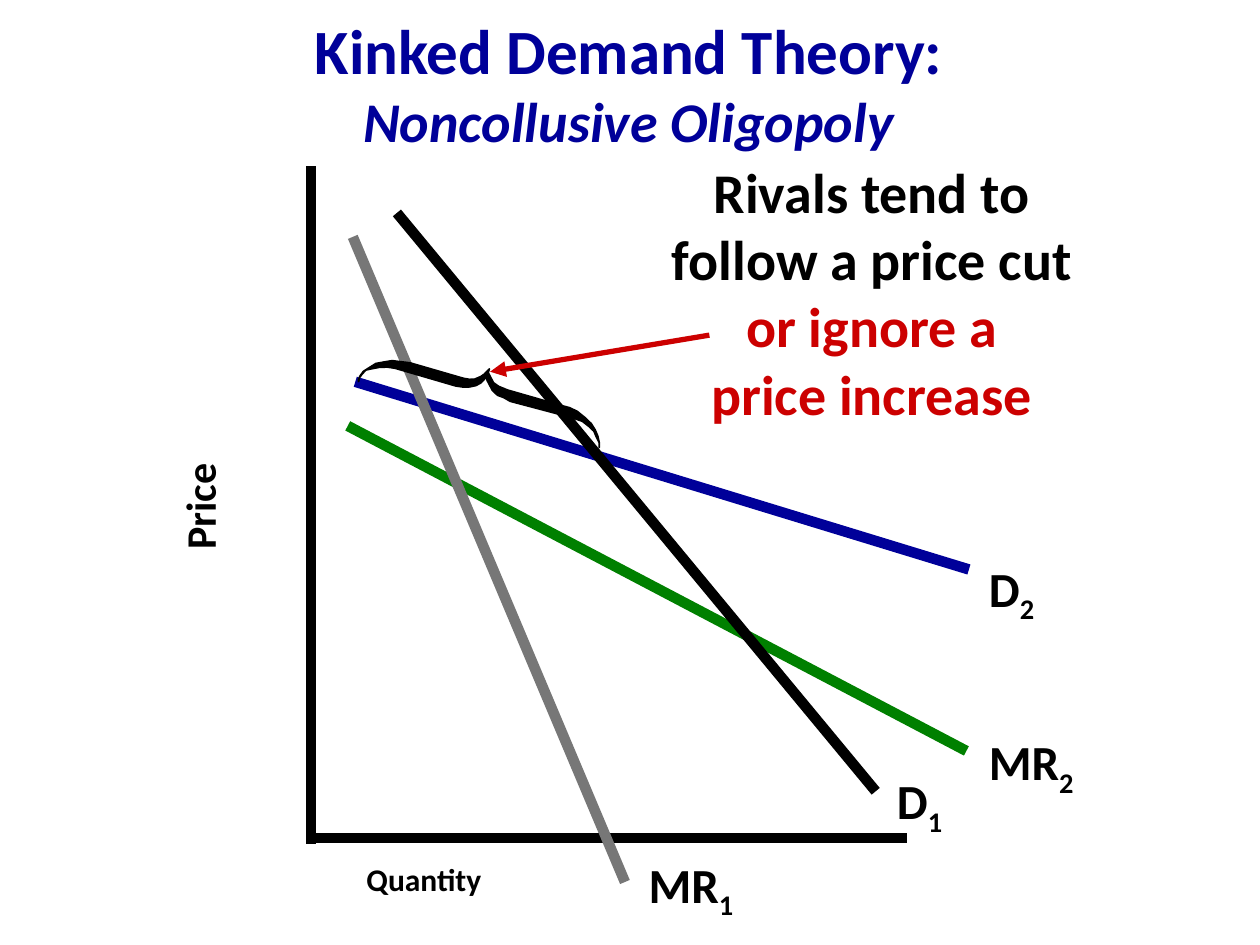
from lxml.etree import SubElement
from pptx import Presentation
from pptx.dml.color import RGBColor
from pptx.enum.shapes import MSO_CONNECTOR as CONNECTOR
from pptx.enum.text import MSO_AUTO_SIZE as AUTO_SIZE, PP_ALIGN as ALIGN
from pptx.oxml.ns import qn
from pptx.util import Inches, Pt

FONT = "Calibri"
BLACK, NAVY, GREEN, GRAY, RED = "000000", "000099", "008000", "777777", "CC0000"

# start, end, colour
CURVES_BEHIND = [
    ((2.76, 3.38), (7.67, 5.96), GREEN),  # MR2
    ((2.82, 3.03), (7.69, 4.52), NAVY),   # D2
    ((2.47, 1.32), (2.47, 6.7), BLACK),   # price axis
    ((2.44, 6.65), (7.2, 6.65), BLACK),   # quantity axis
    ((2.8, 1.88), (4.96, 7), GRAY),       # MR1
    ((3.15, 1.69), (6.95, 6.28), BLACK),  # D1
]
RIVALS_ARROW = ((5.63, 2.66), (3.89, 2.95), RED)

# name, subscript, left, top, width
CURVE_LABELS = [
    ("MR", "2", 7.75, 5.76, 0.97),
    ("D", "1", 7.02, 6.07, 0.88),
    ("D", "2", 7.75, 4.38, 0.88),
    ("MR", "1", 5.05, 6.73, 0.97),
]
LABEL_HEIGHT = 0.56

# box, rotation, alignment, lines of (text, format)
TEXTS = [
    ((2.34, 0.04, 5.3, 1.24), 0, ALIGN.CENTER, [
        ("Kinked Demand Theory:", dict(size=Pt(36), color=NAVY)),
        ("Noncollusive Oligopoly", dict(size=Pt(32), color=NAVY, italic=True))]),
    ((5.01, 1.2, 3.82, 2.23), 0, ALIGN.CENTER, [
        ("Rivals tend to", dict(size=Pt(32), color=BLACK)),
        ("follow a price cut", dict(size=Pt(32), color=BLACK)),
        ("or ignore a", dict(size=Pt(32), color=RED)),
        ("price increase", dict(size=Pt(32), color=RED))]),
    ((2.81, 6.78, 1.55, 0.5), 0, ALIGN.LEFT, [
        ("Quantity", dict(size=Pt(18), color=BLACK))]),
    ((1.07, 3.7, 1.02, 0.5), 270, ALIGN.LEFT, [
        ("Price", dict(size=Pt(24), color=BLACK))]),
]

BRACE_ROTATION = 358.9
BRACE_LOWER_EDGE = [
    (4.75, 3.57), (4.75, 3.53), (4.73, 3.49), (4.71, 3.44), (4.67, 3.4),
    (4.62, 3.36), (4.54, 3.33), (4.05, 3.19), (4, 3.16), (3.95, 3.14),
    (3.91, 3.1), (3.89, 3.06), (3.87, 3.02), (3.87, 2.98), (3.85, 3.01),
    (3.82, 3.04), (3.78, 3.06), (3.73, 3.07), (3.68, 3.07), (3.62, 3.06),
    (3.14, 2.91), (3.08, 2.9), (3.02, 2.9), (2.96, 2.91), (2.91, 2.92),
    (2.88, 2.95), (2.85, 2.99), (2.85, 3.01),
]
BRACE_UPPER_EDGE = [
    (2.86, 2.97), (2.89, 2.93), (2.94, 2.9), (2.99, 2.87), (3.05, 2.86),
    (3.12, 2.85), (3.19, 2.86), (3.26, 2.87), (3.68, 3), (3.73, 3.01),
    (3.77, 3.01), (3.82, 2.99), (3.85, 2.97), (3.88, 2.94), (3.89, 2.93),
    (3.88, 2.96), (3.9, 3), (3.92, 3.04), (3.96, 3.07), (4.03, 3.1),
    (4.45, 3.23), (4.52, 3.25), (4.58, 3.28), (4.64, 3.33), (4.69, 3.38),
    (4.72, 3.43), (4.74, 3.48), (4.75, 3.53),
]


def rgb(color):
    return RGBColor.from_string(color)


def add_line(slide, start, end, color, width=6, arrow=False):
    line = slide.shapes.add_connector(
        CONNECTOR.STRAIGHT, *map(Inches, start + end))
    line.line.color.rgb = rgb(color)
    line.line.width = Pt(width)
    if arrow:
        SubElement(line.line._get_or_add_ln(), qn("a:tailEnd"), type="triangle")
    SubElement(line._element.spPr, qn("a:effectLst"))


def add_text_frame(slide, box, rotation=0):
    text_box = slide.shapes.add_textbox(*map(Inches, box))
    text_box.rotation = rotation
    frame = text_box.text_frame
    frame.word_wrap = True
    frame.auto_size = AUTO_SIZE.NONE
    return frame


def add_run(paragraph, text, color, **formats):
    run = paragraph.add_run()
    run.text = text
    for name, value in dict(name=FONT, bold=True, **formats).items():
        setattr(run.font, name, value)
    run.font.color.rgb = rgb(color)
    return run


def add_curve_label(slide, name, subscript, left, top, width):
    paragraph = add_text_frame(
        slide, (left, top, width, LABEL_HEIGHT)).paragraphs[0]
    add_run(paragraph, name, BLACK, size=Pt(28))
    index = add_run(paragraph, subscript, BLACK, size=Pt(28))
    index.font._element.set("baseline", "-25000")


def add_text(slide, box, rotation, alignment, lines):
    frame = add_text_frame(slide, box, rotation)
    for i, (text, formats) in enumerate(lines):
        paragraph = frame.add_paragraph() if i else frame.paragraphs[0]
        paragraph.alignment = alignment
        add_run(paragraph, text, **formats)


def add_brace(slide):
    first, *rest = [(Inches(x), Inches(y))
                    for x, y in BRACE_LOWER_EDGE + BRACE_UPPER_EDGE]
    builder = slide.shapes.build_freeform(*first)
    builder.add_line_segments(rest, close=True)
    brace = builder.convert_to_shape()
    brace.rotation = BRACE_ROTATION
    brace.shadow.inherit = False
    brace.fill.solid()
    brace.fill.fore_color.rgb = rgb(BLACK)
    brace.line.color.rgb = rgb(BLACK)
    brace.line.width = Pt(1)


def main():
    deck = Presentation()
    deck.slide_width, deck.slide_height = Inches(10), Inches(7.5)
    slide = deck.slides.add_slide(deck.slide_layouts[6])
    for curve in CURVES_BEHIND:
        add_line(slide, *curve)
    for label in CURVE_LABELS:
        add_curve_label(slide, *label)
    for text in TEXTS:
        add_text(slide, *text)
    add_brace(slide)
    add_line(slide, *RIVALS_ARROW, width=3, arrow=True)
    deck.save("out.pptx")


if __name__ == "__main__":
    main()
